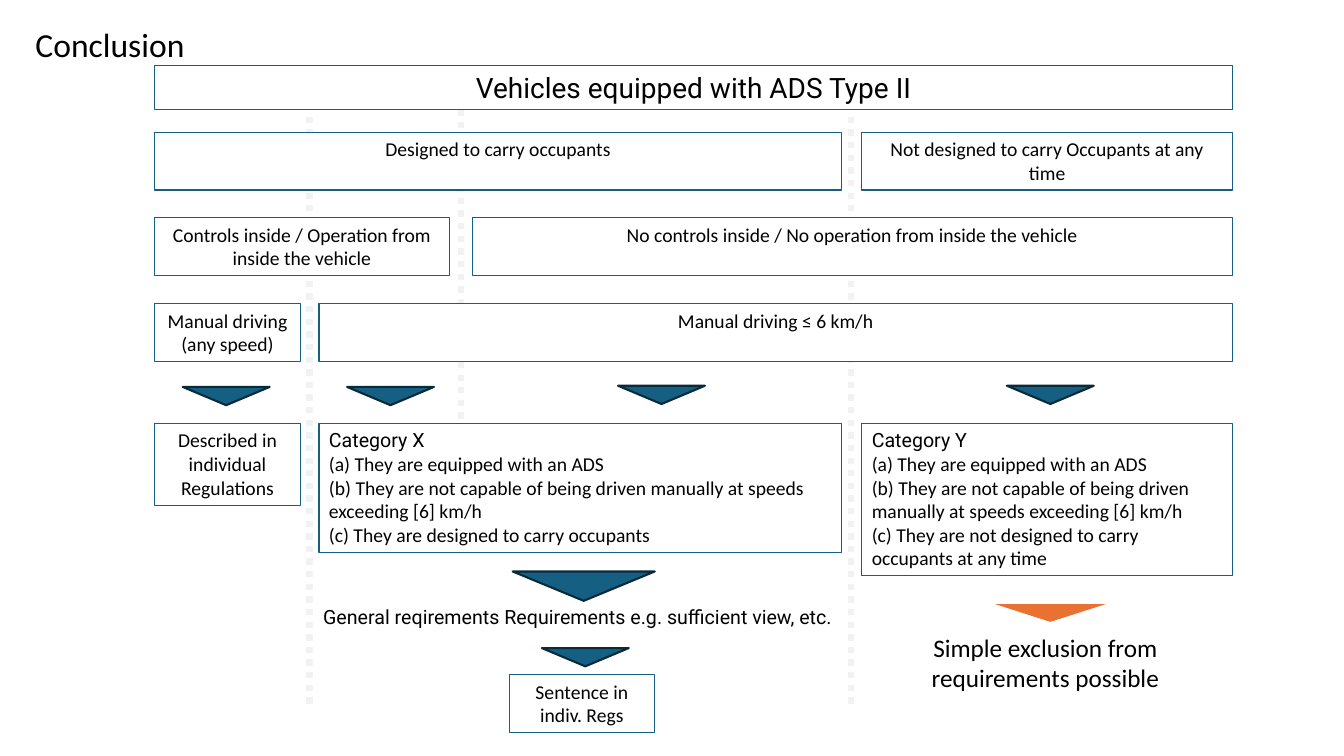
from dataclasses import dataclass

from pptx import Presentation
from pptx import util as u
from pptx.dml.color import RGBColor
from pptx.enum import dml, shapes, text
from pptx.oxml.ns import qn
from lxml import etree


@dataclass(frozen=True)
class Theme:
    ink: RGBColor = RGBColor.from_string("000000")
    paper: RGBColor = RGBColor.from_string("FFFFFF")
    blue: RGBColor = RGBColor.from_string("156082")
    navy: RGBColor = RGBColor.from_string("092A39")
    orange: RGBColor = RGBColor.from_string("E97132")
    guide: RGBColor = RGBColor.from_string("F2F2F2")
    body_font: str = "Calibri"
    accent_font: str = "Roboto"
    title: int = 24
    banner: int = 20
    result: int = 18
    body: int = 14


theme = Theme()
CENTER, LEFT = text.PP_ALIGN.CENTER, text.PP_ALIGN.LEFT


def write(box, words, size=theme.body, font=theme.body_font, heading=None,
          align=CENTER, anchor=text.MSO_ANCHOR.TOP):
    frame = box.text_frame
    frame.word_wrap = True
    frame.auto_size = text.MSO_AUTO_SIZE.NONE
    frame.vertical_anchor = anchor
    para = frame.paragraphs[0]
    para.alignment = align
    lines = [(line, font) for line in words.split("\n")]
    if heading:
        lines.insert(0, (heading, theme.accent_font))
    for index, (line, face) in enumerate(lines):
        if index:
            para.add_line_break()
        span = para.add_run()
        span.text = line
        span.font.name = face
        span.font.size = u.Pt(size)
        span.font.color.rgb = theme.ink


def add_shape(kind, left, top, width, height, fill, line, weight=0.75):
    shape = page.shapes.add_shape(kind, u.Cm(left), u.Cm(top), u.Cm(width), u.Cm(height))
    shape.shadow.inherit = False
    shape.fill.solid()
    shape.fill.fore_color.rgb = fill
    if line is None:
        shape.line.fill.background()
    else:
        shape.line.color.rgb = line
        shape.line.width = u.Pt(weight)
    return shape


deck = Presentation()
deck.slide_width, deck.slide_height = u.Cm(33.87), u.Cm(19.05)
page = deck.slides.add_slide(deck.slide_layouts[5])

title = page.shapes.title
title.left, title.top, title.width, title.height = u.Cm(0.64), u.Cm(0.48), u.Cm(32.59), u.Cm(1.27)
write(title, "Conclusion", size=theme.title, align=LEFT)

for x, top, bottom in [(21.44, 2.49, 17.73), (11.61, 2.08, 10.87), (7.8, 2.08, 17.73)]:
    guide = page.shapes.add_connector(
        shapes.MSO_CONNECTOR.STRAIGHT, u.Cm(x), u.Cm(bottom), u.Cm(x), u.Cm(top))
    guide.line.color.rgb = theme.guide
    guide.line.width = u.Pt(4.5)
    guide.line.dash_style = dml.MSO_LINE.ROUND_DOT
    etree.SubElement(guide._element.spPr, qn("a:effectLst"))

left_edge, right_edge = 3.9, 31.06
manual_right, category_left = 7.57, 8.04
controls_right, remote_left = 11.32, 11.9
occupied_right, empty_left = 21.21, 21.72
levels = [3.33 + 2.16 * step for step in range(3)]
outcomes, row_height = 10.67, 1.46

banner = dict(size=theme.banner, font=theme.accent_font, anchor=text.MSO_ANCHOR.MIDDLE)
boxes = [
    (left_edge, right_edge, 1.65, 1.12, "Vehicles equipped with ADS Type II", banner),
    (left_edge, occupied_right, levels[0], row_height, "Designed to carry occupants", {}),
    (empty_left, right_edge, levels[0], row_height,
     "Not designed to carry Occupants at any time", {}),
    (left_edge, controls_right, levels[1], row_height,
     "Controls inside / Operation from inside the vehicle", {}),
    (remote_left, right_edge, levels[1], row_height,
     "No controls inside / No operation from inside the vehicle", {}),
    (left_edge, manual_right, levels[2], row_height, "Manual driving (any speed)", {}),
    (category_left, right_edge, levels[2], row_height, "Manual driving ≤ 6 km/h", {}),
    (left_edge, manual_right, outcomes, 2.07, "Described in individual Regulations", {}),
    (category_left, occupied_right, outcomes, 3.26,
     "(a) They are equipped with an ADS\n"
     "(b) They are not capable of being driven manually at speeds exceeding [6] km/h\n"
     "(c) They are designed to carry occupants", dict(heading="Category X", align=LEFT)),
    (empty_left, right_edge, outcomes, 3.84,
     "(a) They are equipped with an ADS\n"
     "(b) They are not capable of being driven manually at speeds exceeding [6] km/h\n"
     "(c) They are not designed to carry occupants at any time",
     dict(heading="Category Y", align=LEFT)),
    (12.83, 16.5, 17, row_height, "Sentence in indiv. Regs", {}),
]
for left, right, top, height, words, style in boxes:
    box = add_shape(shapes.MSO_SHAPE.RECTANGLE, left, top, right - left, height,
                    theme.paper, theme.blue)
    write(box, words, **style)

small, large, wide = (2.19, 0.46), (3.58, 0.74), (2.8, 0.45)
arrows = [
    (5.7, 9.75, small), (9.84, 9.75, small), (16.67, 9.72, small), (26.47, 9.72, small),
    (14.71, 14.4, large), (14.75, 16.33, small), (26.47, 15.22, wide),
]
for center, top, (width, height) in arrows:
    fill, line = (theme.orange, None) if width == wide[0] else (theme.blue, theme.navy)
    arrow = add_shape(shapes.MSO_SHAPE.ISOSCELES_TRIANGLE, center - width / 2, top,
                      width, height, fill, line, weight=1.5)
    arrow.rotation = 180

notes = [
    (6.15, 15.11, 16.94, 0.86, "General reqirements Requirements e.g. sufficient view, etc. ",
     dict(font=theme.accent_font)),
    (21.67, 15.8, 9.35, 1.8, "Simple exclusion from requirements possible",
     dict(size=theme.result)),
]
for left, top, width, height, words, style in notes:
    box = page.shapes.add_textbox(u.Cm(left), u.Cm(top), u.Cm(width), u.Cm(height))
    write(box, words, **style)

deck.save("out.pptx")
